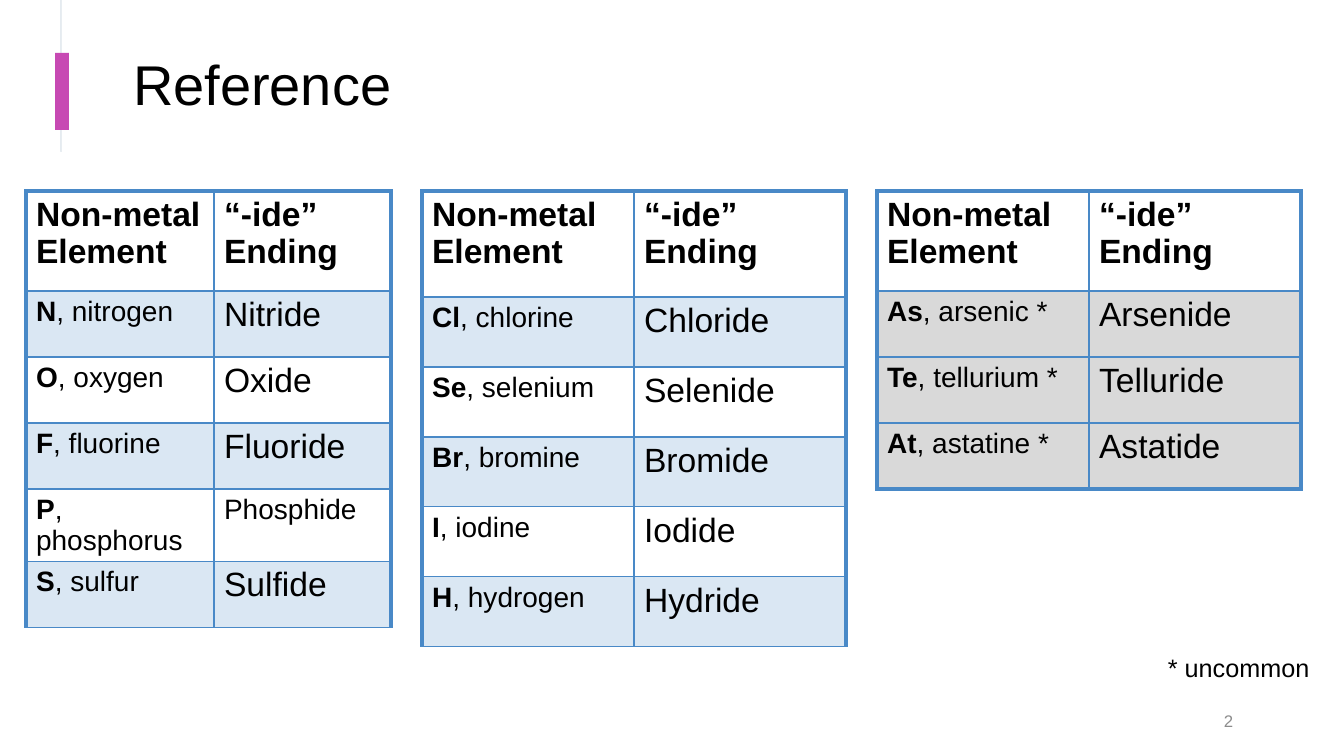
from lxml import etree
from pptx import Presentation
from pptx import util as u
from pptx.dml.color import RGBColor
from pptx.enum import shapes, text
from pptx.oxml import ns

BLUE, GREY, WHITE, BLACK = "4989C7", "D9D9D9", "FFFFFF", "000000"
HEADINGS = ("Non-metal Element", "“-ide” Ending")
TABLES = [
    ((26, 191), (188, 177), (100, 66), BLUE, [
        ("N", "nitrogen", "Nitride", 24),
        ("O", "oxygen", "Oxide", 24),
        ("F", "fluorine", "Fluoride", 24),
        ("P", "phosphorus", "Phosphide", 20),
        ("S", "sulfur", "Sulfide", 24)]),
    ((422, 191), (212, 212), (106, 70), BLUE, [
        ("Cl", "chlorine", "Chloride", 24),
        ("Se", "selenium", "Selenide", 24),
        ("Br", "bromine", "Bromide", 24),
        ("I", "iodine", "Iodide", 24),
        ("H", "hydrogen", "Hydride", 24)]),
    ((877, 191), (212, 212), (100, 66), GREY, [
        ("As", "arsenic *", "Arsenide", 24),
        ("Te", "tellurium *", "Telluride", 24),
        ("At", "astatine *", "Astatide", 24)]),
]


def px(n):
    """Turn slide pixels into EMU."""
    return u.Emu(round(n * 914400 / 100.8))


def rgb(value):
    """Turn a hex string into a colour."""
    return RGBColor.from_string(value)


def add_run(p, words, size, bold=False, color=BLACK):
    """Add one formatted run to a paragraph."""
    r = p.add_run()
    r.text = words
    r.font.name, r.font.size, r.font.bold = "Arial", u.Pt(size), bold
    r.font.color.rgb = rgb(color)


def add_rect(s, box, fill, line=None):
    """Add a plain rectangle, outlined when a line colour is given."""
    sp = s.shapes.add_shape(shapes.MSO_SHAPE.RECTANGLE, *map(px, box))
    sp.shadow.inherit = False
    sp.fill.solid()
    sp.fill.fore_color.rgb = rgb(fill)
    if line:
        sp.line.color.rgb = rgb(line)
        sp.line.width = u.Pt(0.75)
    else:
        sp.line.fill.background()


def add_header(s, box, title):
    """Draw the title panel with its accent bar and title."""
    x, y, w, h = box
    add_rect(s, box, WHITE, "E5EBF0")
    add_rect(s, (x + 1, y, w - 1, h + 1), WHITE)
    add_rect(s, (x - 6, y + 53, 14, 77), "C749B3")
    sp = s.shapes.title
    sp.element.getparent().append(sp.element)
    sp.left, sp.top, sp.width, sp.height = map(px, (x + 62, y + 22, 1121, 130))
    tf = sp.text_frame
    tf.auto_size = text.MSO_AUTO_SIZE.NONE
    tf.vertical_anchor = text.MSO_ANCHOR.MIDDLE
    p = tf.paragraphs[0]
    p.alignment, p.line_spacing = text.PP_ALIGN.LEFT, 0.9
    add_run(p, title, 40)


def paint_cell(cell, fill, borders):
    """Fill a cell and set its left, right, top and bottom border widths."""
    tc_pr = cell._tc.get_or_add_tcPr()
    if fill:
        cell.fill.solid()
        cell.fill.fore_color.rgb = rgb(fill)
        if fill == BLUE:
            color = tc_pr.find(".//" + ns.qn("a:srgbClr"))
            etree.SubElement(color, ns.qn("a:alpha"), val="20000")
    else:
        cell.fill.background()
    for i, (side, width) in enumerate(zip("LRTB", borders)):
        ln = etree.Element(ns.qn(f"a:ln{side}"), w=str(u.Pt(width)))
        solid = etree.SubElement(ln, ns.qn("a:solidFill"))
        etree.SubElement(solid, ns.qn("a:srgbClr"), val=BLUE)
        tc_pr.insert(i, ln)


def add_elements(s, corner, widths, heights, tint, elements):
    """Build one table of elements and their endings."""
    head, body = heights
    count = len(elements) + 1
    size = sum(widths), head + body * len(elements)
    table = s.shapes.add_table(count, 2, *map(px, corner + size)).table
    table.first_row = table.horz_banding = False
    for col, width in zip(table.columns, widths):
        col.width = px(width)
    for i, row in enumerate(table.rows):
        row.height = px(body if i else head)
        shaded = i and (tint == GREY or i % 2)
        top = 2 if i == 1 else 1 if i else 3
        bottom = 1 if i else 2
        if tint == GREY and i == count - 1:
            bottom = 3
        for j, cell in enumerate(row.cells):
            paint_cell(cell, tint if shaded else None,
                       (1 if j else 3, 3 if j else 1, top, bottom))
        left, right = (cell.text_frame.paragraphs[0] for cell in row.cells)
        if i:
            symbol, name, ending, points = elements[i - 1]
            add_run(left, symbol, 20, True)
            add_run(left, f", {name}", 20)
            add_run(right, ending, points)
        else:
            for p, heading in zip((left, right), HEADINGS):
                add_run(p, heading, 24, True)


def add_note(s, box, words):
    """Add the unwrapped footnote."""
    tf = s.shapes.add_textbox(*map(px, box)).text_frame
    tf.word_wrap = False
    tf.auto_size = text.MSO_AUTO_SIZE.SHAPE_TO_FIT_TEXT
    add_run(tf.paragraphs[0], words, 18)


def add_page_number(s, box, number):
    """Add the right-aligned page number."""
    tf = s.shapes.add_textbox(*map(px, box)).text_frame
    tf.word_wrap = True
    tf.vertical_anchor = text.MSO_ANCHOR.MIDDLE
    p = tf.paragraphs[0]
    p.alignment = text.PP_ALIGN.RIGHT
    add_run(p, number, 12, color="8C8C8C")


def main():
    """Build and save the reference slide."""
    prs = Presentation()
    prs.slide_width, prs.slide_height = px(1344), px(756)
    s = prs.slides.add_slide(prs.slide_layouts[5])
    add_header(s, (61, 0, 1231, 152), "Reference")
    for table in TABLES:
        add_elements(s, *table)
    add_note(s, (1158, 647, 171, 40), "* uncommon")
    add_page_number(s, (941, 701, 302, 40), "2")
    prs.save("out.pptx")


if __name__ == "__main__":
    main()
